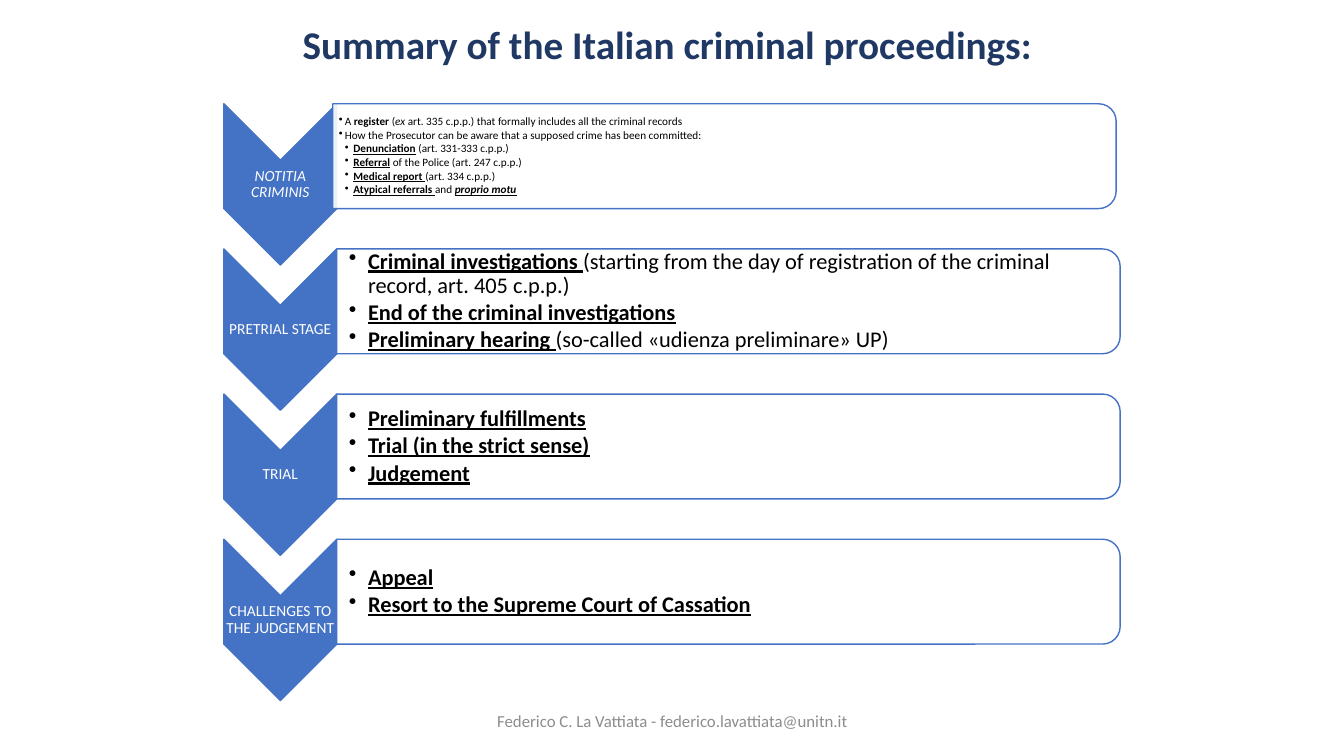
from lxml import etree
from pptx import Presentation, util as u
from pptx.dml.color import RGBColor
from pptx.enum import shapes as kinds, text as t
from pptx.oxml.ns import qn

WIDTH, HEIGHT = 13.33, 7.5
BLUE, NAVY, GREY, WHITE, BLACK = "4472C4", "203864", "8C8C8C", "FFFFFF", "000000"
FONT = "Calibri"
STAGE_LEFT, STAGE_TOP, STAGE_PITCH = 2.22, 1.03, 1.44
ARROW_W, ARROW_H = 1.12, 1.6
PANEL_W, PANEL_H = 7.77, 1.04
LABEL_SIZE = 11

# Each item is (level, runs); each run is (words, style letters b, i, u).
STAGES = [
    {"label": "NOTITIA CRIMINIS", "style": "i", "size": 8, "indent": 0.06, "shift": -0.04,
     "items": [
         (1, [("A ", ""), ("register ", "b"), ("(", ""), ("ex", "i"),
              (" art. 335 c.p.p.) that formally includes all the criminal records", "")]),
         (1, [("How the Prosecutor can be aware that a supposed crime has been committed:", "")]),
         (2, [(" ", ""), ("Denunciation", "bu"), (" (art. 331-333 c.p.p.)", "")]),
         (2, [(" ", ""), ("Referral", "bu"), (" of the Police (art. 247 c.p.p.)", "")]),
         (2, [(" ", ""), ("Medical report ", "bu"), ("(art. 334 c.p.p.)", "")]),
         (2, [(" ", ""), ("Atypical referrals ", "bu"), ("and ", ""), ("proprio motu", "biu")]),
     ]},
    {"label": "PRETRIAL STAGE", "items": [
        (1, [("Criminal investigations ", "bu"),
             ("(starting from the day of registration of the criminal record, art. 405 c.p.p.)", "")]),
        (1, [("End of the criminal investigations", "bu")]),
        (1, [("Preliminary hearing ", "bu"), ("(so-called «udienza preliminare» UP)", "")]),
    ]},
    {"label": "TRIAL", "items": [
        (1, [("Preliminary fulfillments", "bu")]),
        (1, [("Trial (in the strict sense)", "bu")]),
        (1, [("Judgement", "bu")]),
    ]},
    {"label": "CHALLENGES TO THE JUDGEMENT ", "items": [
        (1, [("Appeal", "bu")]),
        (1, [("Resort to the Supreme Court of Cassation", "bu")]),
    ]},
]


def color(hex_code):
    return RGBColor.from_string(hex_code)


def inches(box):
    return [u.Inches(length) for length in box]


def add_frame(slide, box, anchor=t.MSO_ANCHOR.MIDDLE, insets=(0.1, 0.05, 0.1, 0.05)):
    frame = slide.shapes.add_textbox(*inches(box)).text_frame
    left, top, right, bottom = inches(insets)
    settings = {"word_wrap": True, "vertical_anchor": anchor, "margin_left": left,
                "margin_top": top, "margin_right": right, "margin_bottom": bottom}
    for name, value in settings.items():
        setattr(frame, name, value)
    return frame


def add_run(paragraph, words, size, ink, style=""):
    run = paragraph.add_run()
    run.text = words
    run.font.color.rgb = color(ink)
    settings = {"name": FONT, "size": u.Pt(size), "bold": "b" in style,
                "italic": "i" in style, "underline": "u" in style}
    for name, value in settings.items():
        setattr(run.font, name, value)


def add_line(slide, box, words, size, ink, style="", **frame_options):
    """One centred paragraph in its own box."""
    paragraph = add_frame(slide, box, **frame_options).paragraphs[0]
    paragraph.alignment = t.PP_ALIGN.CENTER
    add_run(paragraph, words, size, ink, style)
    return paragraph


def add_turned(slide, kind, box, fill):
    """Preset shape that fills the box after a quarter turn."""
    left, top, width, height = box
    shift = (width - height) / 2
    shape = slide.shapes.add_shape(kind, *inches((left + shift, top - shift, height, width)))
    shape.rotation = 90
    shape.shadow.inherit = False
    shape.fill.solid()
    shape.fill.fore_color.rgb = color(fill)
    shape.line.color.rgb = color(BLUE)
    shape.line.width = u.Pt(1)
    return shape


def add_arrow(slide, box, label, style):
    left, top, width, height = box
    add_turned(slide, kinds.MSO_SHAPE.CHEVRON, box, BLUE)
    label_box = (left, top + width / 2, width, height - width)
    paragraph = add_line(slide, label_box, label, LABEL_SIZE, WHITE, style, insets=[0.01] * 4)
    paragraph.line_spacing = 0.9


def add_panel(slide, box, items, size, indent):
    left, top, width, height = box
    panel = add_turned(slide, kinds.MSO_SHAPE.ROUND_2_SAME_RECTANGLE, box, WHITE)
    tint = next(panel._element.spPr.iter(qn("a:srgbClr")))
    etree.SubElement(tint, qn("a:alpha"), val="90000")
    inset = 0.06 if size < LABEL_SIZE else 0.12
    frame = add_frame(slide, (left, top + 0.05, width - 0.05, height - 0.1),
                      insets=(inset, 0.01, 0.01, 0.01))
    for number, (level, runs) in enumerate(items):
        paragraph = frame.add_paragraph() if number else frame.paragraphs[0]
        settings = {"level": level, "line_spacing": 0.9, "space_after": u.Pt(size * 0.14)}
        for name, value in settings.items():
            setattr(paragraph, name, value)
        properties = paragraph._p.get_or_add_pPr()
        properties.set("marL", str(u.Inches(indent * level)))
        properties.set("indent", str(-u.Inches(indent)))
        etree.SubElement(properties, qn("a:buChar"), char="•")
        for words, style in runs:
            add_run(paragraph, words, size, BLACK, style)


def add_stage(slide, left, top, label, items, style="", size=16, indent=0.19, shift=0):
    add_arrow(slide, (left, top, ARROW_W, ARROW_H), label, style)
    add_panel(slide, (left + ARROW_W + shift, top, PANEL_W, PANEL_H), items, size, indent)


def main():
    deck = Presentation()
    deck.slide_width, deck.slide_height = inches((WIDTH, HEIGHT))
    slide = deck.slides.add_slide(deck.slide_layouts[6])
    add_line(slide, (4.42, 6.95, 4.5, 0.4),
             "Federico C. La Vattiata - federico.lavattiata@unitn.it", 12, GREY)
    add_line(slide, (0.72, 0.15, 11.88, 0.57), "Summary of the Italian criminal proceedings: ",
             28, NAVY, "b", anchor=t.MSO_ANCHOR.TOP)
    for row, stage in enumerate(STAGES):
        add_stage(slide, STAGE_LEFT, STAGE_TOP + row * STAGE_PITCH, **stage)
    deck.save("out.pptx")


if __name__ == "__main__":
    main()
